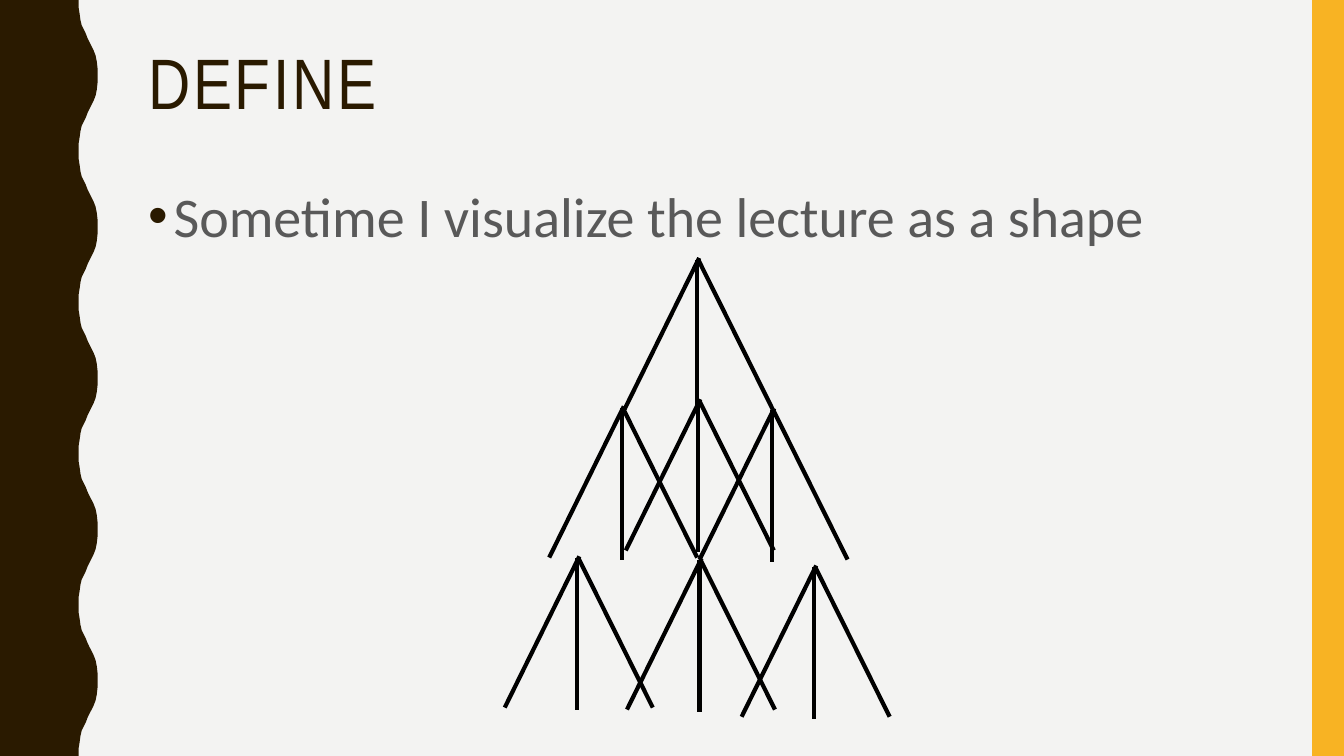
from dataclasses import dataclass

from lxml.etree import SubElement
from pptx import Presentation
from pptx.dml.color import RGBColor
from pptx.enum.shapes import MSO_CONNECTOR, MSO_SHAPE
from pptx.enum.text import MSO_ANCHOR, MSO_AUTO_SIZE, PP_ALIGN
from pptx.oxml.ns import qn
from pptx.util import Cm, Pt

SLIDE_WIDTH, SLIDE_HEIGHT = 33.87, 19.05

# Upper half of one wave, from trough to crest: (x, y) in cm
WAVE_PERIOD = 3.81
WAVE_RISE = [(1.98, 0), (1.98, 0.18), (2.01, 0.36), (2.03, 0.51), (2.06, 0.64),
             (2.11, 0.74), (2.16, 0.84), (2.21, 0.97), (2.26, 1.07), (2.31, 1.17),
             (2.36, 1.27), (2.41, 1.4), (2.44, 1.55), (2.46, 1.73), (2.46, 1.9)]

# Strokes of one branch relative to its apex: x1, y1, x2, y2 in cm
BRANCH_STROKES = [(0, 0, -1.88, 3.81),
                  (-0.05, 0.05, -0.05, 3.86),
                  (-0.03, 0.03, 1.85, 3.81)]
BRANCH_APEXES = [(17.62, 6.5), (17.65, 10.06),
                 (14.6, 14.02), (17.68, 14.07), (20.57, 14.25),
                 (15.72, 10.24), (19.51, 10.29)]


@dataclass(frozen=True)
class Theme:
    background: str = "F3F3F2"
    dark: str = "2A1A00"
    accent: str = "F8B323"
    body: str = "595959"
    stroke: str = "000000"
    title_font: str = "Arial Narrow"
    body_font: str = "Calibri"
    title_size: int = 51
    body_size: int = 40
    stroke_width: int = 3


def apply(target, values):
    for name, value in values.items():
        setattr(target, name, value)


class SlideBuilder:
    def __init__(self, slide, theme):
        self.slide = slide
        self.theme = theme

    def background(self):
        fill = self.slide.background.fill
        fill.solid()
        fill.fore_color.rgb = RGBColor.from_string(self.theme.background)

    def paint(self, shape, color):
        shape.shadow.inherit = False
        shape.fill.solid()
        shape.fill.fore_color.rgb = RGBColor.from_string(color)
        shape.line.fill.background()

    def wavy_edge(self):
        wave = WAVE_RISE + [(x, WAVE_PERIOD - y) for x, y in reversed(WAVE_RISE)]
        outline = [(x, y + n * WAVE_PERIOD) for n in range(5) for x, y in wave]
        outline.append((0, SLIDE_HEIGHT))
        builder = self.slide.shapes.build_freeform(0, 0)
        builder.add_line_segments([(Cm(x), Cm(y)) for x, y in outline])
        self.paint(builder.convert_to_shape(), self.theme.dark)

    def side_bar(self, left):
        bar = self.slide.shapes.add_shape(
            MSO_SHAPE.RECTANGLE, Cm(left), 0, Cm(SLIDE_WIDTH - left), Cm(SLIDE_HEIGHT))
        self.paint(bar, self.theme.accent)

    def fill_placeholder(self, placeholder, text, box, font, paragraph_format):
        """Place the placeholder, write its single paragraph and return it."""
        apply(placeholder, dict(zip(("left", "top", "width", "height"), map(Cm, box))))
        apply(placeholder.text_frame, {"word_wrap": True,
                                       "auto_size": MSO_AUTO_SIZE.NONE,
                                       "vertical_anchor": MSO_ANCHOR.TOP})
        paragraph = placeholder.text_frame.paragraphs[0]
        apply(paragraph, {"alignment": PP_ALIGN.LEFT, **paragraph_format})
        run = paragraph.add_run()
        run.text = text
        color = font.pop("color")
        apply(run.font, font)
        run.font.color.rgb = RGBColor.from_string(color)
        return paragraph

    def title(self, text):
        theme = self.theme
        paragraph = self.fill_placeholder(
            self.slide.shapes.title, text, (3.48, 1.07, 28.27, 4.14),
            {"name": theme.title_font, "size": Pt(theme.title_size), "color": theme.dark},
            {"line_spacing": 0.9})
        paragraph.runs[0].font._element.set("spc", "200")

    def bullet(self, text):
        theme = self.theme
        paragraph = self.fill_placeholder(
            self.slide.placeholders[1], text, (3.48, 4.27, 28.27, 14.14),
            {"name": theme.body_font, "size": Pt(theme.body_size), "color": theme.body},
            {"line_spacing": 1.1, "space_before": Pt(7)})
        properties = paragraph._p.get_or_add_pPr()
        properties.set("marL", str(Cm(0.64)))
        properties.set("indent", str(-Cm(0.64)))
        bullet_color = SubElement(properties, qn("a:buClr"))
        SubElement(bullet_color, qn("a:srgbClr"), val=theme.dark)
        SubElement(properties, qn("a:buFont"), typeface="Arial")
        SubElement(properties, qn("a:buChar"), char="•")

    def stroke(self, x1, y1, x2, y2):
        connector = self.slide.shapes.add_connector(
            MSO_CONNECTOR.STRAIGHT, Cm(x1), Cm(y1), Cm(x2), Cm(y2))
        connector.line.color.rgb = RGBColor.from_string(self.theme.stroke)
        connector.line.width = Pt(self.theme.stroke_width)
        SubElement(connector._element.spPr, qn("a:effectLst"))

    def branch(self, x, y):
        """Draw three strokes spreading down from the apex."""
        for x1, y1, x2, y2 in BRANCH_STROKES:
            self.stroke(x + x1, y + y1, x + x2, y + y2)


def main():
    presentation = Presentation()
    apply(presentation, {"slide_width": Cm(SLIDE_WIDTH), "slide_height": Cm(SLIDE_HEIGHT)})
    slide = presentation.slides.add_slide(presentation.slide_layouts[1])
    builder = SlideBuilder(slide, Theme())
    builder.background()
    builder.wavy_edge()
    builder.side_bar(33.07)
    builder.title("DEFINE")
    builder.bullet("Sometime I visualize the lecture as a shape")
    for apex in BRANCH_APEXES:
        builder.branch(*apex)
    presentation.save("out.pptx")


if __name__ == "__main__":
    main()
